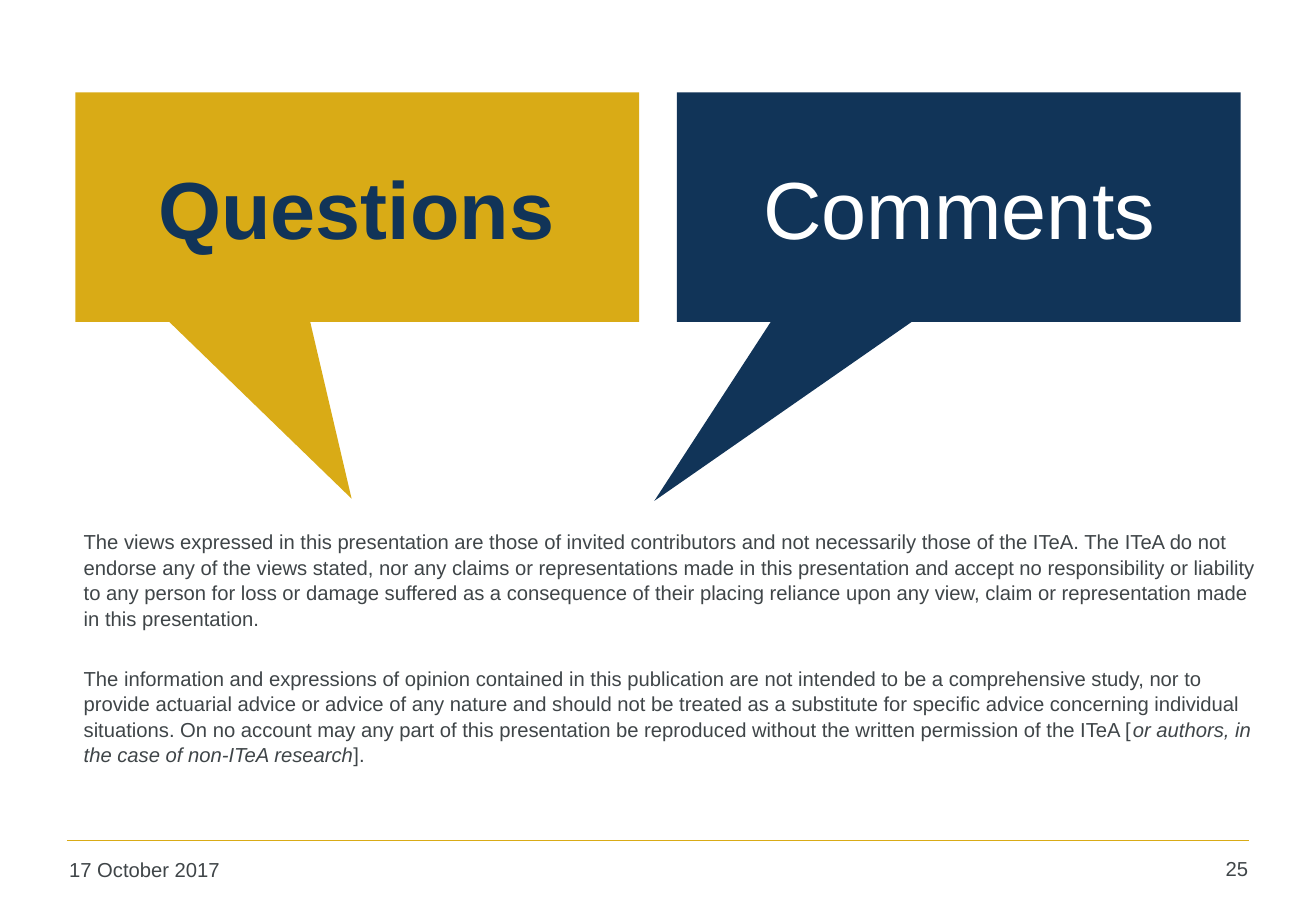
from lxml import etree
from pptx import Presentation
from pptx import util as u
from pptx.dml.color import RGBColor
from pptx.enum import shapes, text
from pptx.oxml import ns

COLOURS = {"gold": "D9AB16", "navy": "113458", "white": "FFFFFF", "grey": "3F4548"}

VIEWS = (
    "The views expressed in this presentation are those of invited contributors and not "
    "necessarily those of the ITeA. The ITeA do not endorse any of the views stated, nor any "
    "claims or representations made in this presentation and accept no responsibility or "
    "liability to any person for loss or damage suffered as a consequence of their placing "
    "reliance upon any view, claim or representation made in this presentation."
)
INFORMATION = (
    "The information and expressions of opinion contained in this publication are not intended "
    "to be a comprehensive study, nor to provide actuarial advice or advice of any nature and "
    "should not be treated as a substitute for specific advice concerning individual situations. "
    "On no account may any part of this presentation be reproduced without the written "
    "permission of the ITeA ["
)
AUTHORS = "or authors, in the case of non-ITeA research"


def colour(name):
    return RGBColor.from_string(COLOURS[name])


def place(box, left, top, width, height):
    box.left, box.top = u.Inches(left), u.Inches(top)
    box.width, box.height = u.Inches(width), u.Inches(height)


def add_span(para, words, size, ink, bold=False, italic=False):
    span = para.add_run()
    span.text = words
    font = span.font
    font.name, font.size = "Arial", u.Pt(size)
    font.bold, font.italic = bold, italic
    font.color.rgb = colour(ink)


def add_box(page, left, top, width, height):
    box = page.shapes.add_textbox(*map(u.Inches, (left, top, width, height)))
    box.text_frame.word_wrap = True
    return box


def add_callout(page, left, fill, tip):
    bubble = page.shapes.add_shape(
        shapes.MSO_SHAPE.RECTANGULAR_CALLOUT, *map(u.Inches, (left, 0.76, 4.64, 1.89)))
    bubble.shadow.inherit = False
    bubble.fill.solid()
    bubble.fill.fore_color.rgb = colour(fill)
    bubble.line.fill.background()
    for index, value in enumerate(tip):
        bubble.adjustments[index] = value


def write_heading(box, left, words, ink, bold):
    place(box, left, 1.08, 4.17, 1.25)
    frame = box.text_frame
    frame.word_wrap = True
    frame.auto_size = text.MSO_AUTO_SIZE.NONE
    frame.vertical_anchor = text.MSO_ANCHOR.MIDDLE
    para = frame.paragraphs[0]
    para.alignment = text.PP_ALIGN.CENTER
    add_span(para, words, 48, ink, bold)


def add_disclaimer(page):
    frame = add_box(page, 0.59, 4.3, 9.95, 2.66).text_frame
    views, information = frame.paragraphs[0], frame.add_paragraph()
    information.space_before = u.Pt(20.5)
    for para in (views, information):
        para.line_spacing = 1.05
    add_span(views, VIEWS, 12, "grey")
    add_span(information, INFORMATION, 12, "grey")
    add_span(information, AUTHORS, 12, "grey", italic=True)
    add_span(information, "].", 12, "grey")


def add_footer(page):
    rule = page.shapes.add_connector(
        shapes.MSO_CONNECTOR.STRAIGHT, *map(u.Inches, (0.55, 6.92, 10.28, 6.92)))
    rule.line.color.rgb = colour("gold")
    rule.line.width = u.Pt(1)
    etree.SubElement(rule._element.spPr, ns.qn("a:effectLst"))
    date = add_box(page, 0.47, 7.01, 2.39, 0.36).text_frame.paragraphs[0]
    add_span(date, "17 October 2017", 12, "grey")
    number = add_box(page, 9.6, 7, 0.77, 0.37).text_frame.paragraphs[0]
    number.alignment = text.PP_ALIGN.RIGHT
    add_span(number, "25", 12, "grey")


def main():
    deck = Presentation()
    deck.slide_width, deck.slide_height = u.Inches(10.83), u.Inches(7.5)
    page = deck.slides.add_slide(deck.slide_layouts[5])
    add_footer(page)
    add_disclaimer(page)
    add_callout(page, 0.62, "gold", (-0.01, 1.27))
    add_callout(page, 5.57, "navy", (-0.54, 1.28))
    title = page.shapes.title
    page.shapes._spTree.append(title._element)
    write_heading(title, 0.85, "Questions", "navy", True)
    comments = add_box(page, 5.81, 1.08, 4.17, 1.25)
    write_heading(comments, 5.81, "Comments", "white", False)
    deck.save("out.pptx")


if __name__ == "__main__":
    main()
